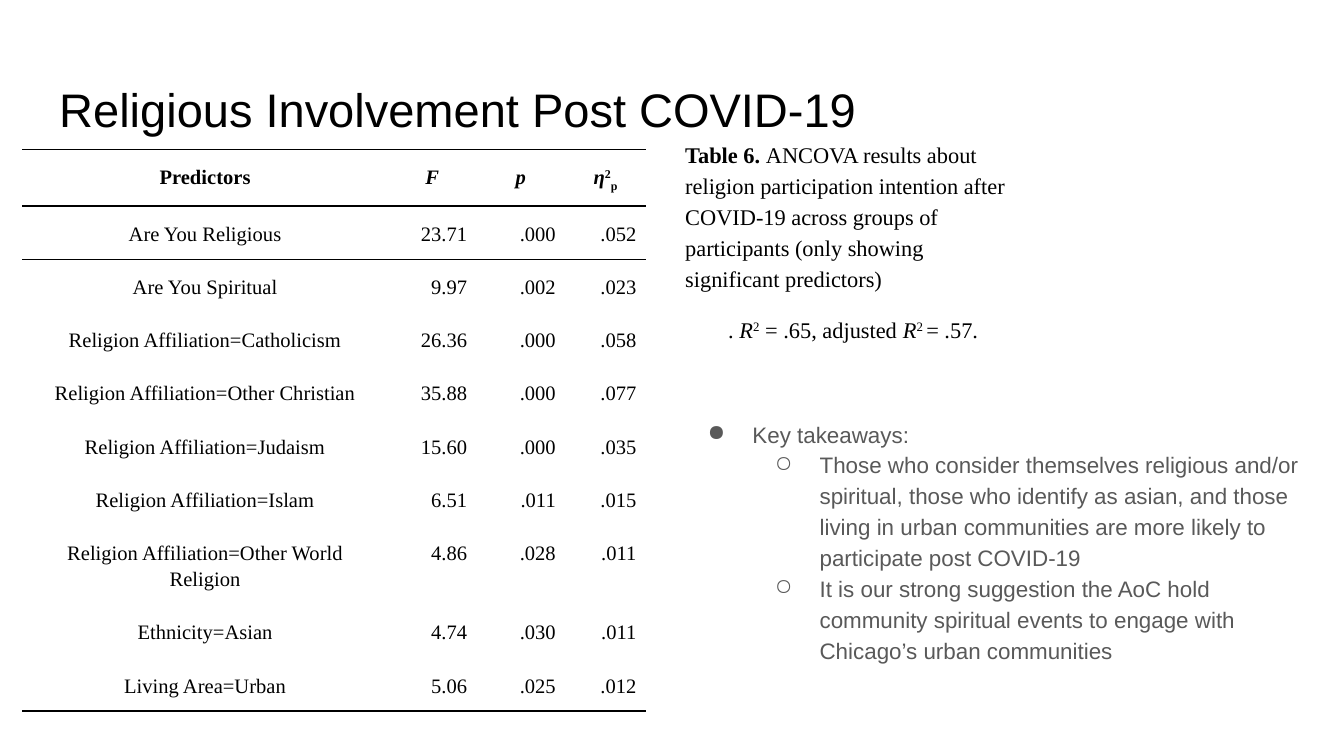
"""Build the slide on religious involvement after COVID-19."""
from lxml.etree import Element, SubElement
from pptx import Presentation
from pptx.dml.color import RGBColor
from pptx.enum.text import MSO_ANCHOR, MSO_AUTO_SIZE, PP_ALIGN
from pptx.oxml.ns import qn
from pptx.util import Pt

THEME = {
    "ink": "000000",
    "grey": "595959",
    "sans": "Arial",
    "serif": "Times New Roman",
    "title": 25.2,
    "body": 12,
    "table": 11,
}
BOLD, ITALIC = {"bold": True}, {"italic": True}
SUPER, SUB = {"baseline": 30000}, {"baseline": -25000}


def add_spans(para, spans, face, size, color):
    for text, style in spans:
        span = para.add_run()
        span.text = text
        values = {"name": THEME[face], "size": Pt(THEME[size]), "bold": False, "italic": False} | style
        baseline = values.pop("baseline", None)
        for name, value in values.items():
            setattr(span.font, name, value)
        span.font.color.rgb = RGBColor.from_string(THEME[color])
        if baseline:
            span.font._element.set("baseline", str(baseline))


def add_border(cell, edge):
    line = Element(qn(f"a:{edge}"), w=str(Pt(1)))
    fill = SubElement(line, qn("a:solidFill"))
    SubElement(fill, qn("a:srgbClr"), val=THEME["ink"])
    cell._tc.get_or_add_tcPr().insert(0, line)


deck = Presentation()
deck.slide_width, deck.slide_height = Pt(720), Pt(405)
page = deck.slides.add_slide(deck.slide_layouts[5])

title = page.shapes.title
for name, value in {"left": 24.5, "top": 35.3, "width": 671, "height": 45.4}.items():
    setattr(title, name, Pt(value))
title_para = title.text_frame.paragraphs[0]
title_para.alignment = PP_ALIGN.LEFT
add_spans(title_para, [("Religious Involvement Post COVID-19", {})], "sans", "title", "ink")

takeaways = page.shapes.add_textbox(Pt(360), Pt(216), Pt(348), Pt(167))
caption = page.shapes.add_textbox(Pt(360), Pt(29.5), Pt(195), Pt(198))
for box, anchor in (
    (title, MSO_ANCHOR.BOTTOM),
    (takeaways, MSO_ANCHOR.TOP),
    (caption, MSO_ANCHOR.MIDDLE),
):
    frame = {"word_wrap": True, "auto_size": MSO_AUTO_SIZE.NONE, "vertical_anchor": anchor}
    frame |= {f"margin_{side}": Pt(7.2) for side in ("left", "right", "top", "bottom")}
    for name, value in frame.items():
        setattr(box.text_frame, name, value)

points = [
    (0, "Key takeaways:"),
    (1, "Those who consider themselves religious and/or spiritual, those who identify as asian, "
        "and those living in urban communities are more likely to participate post COVID-19"),
    (1, "It is our strong suggestion the AoC hold community spiritual events to engage with "
        "Chicago’s urban communities"),
]
for index, (level, text) in enumerate(points):
    body = takeaways.text_frame
    para = body.add_paragraph() if index else body.paragraphs[0]
    para.level, para.line_spacing = level, 1.15
    properties = para._p.get_or_add_pPr()
    properties.set("marL", str(Pt(36 * (level + 1))))
    properties.set("indent", str(Pt(-24)))
    bullet_color = SubElement(properties, qn("a:buClr"))
    SubElement(bullet_color, qn("a:srgbClr"), val=THEME["grey"])
    SubElement(properties, qn("a:buChar"), char="●○"[level])
    add_spans(para, [(text, {})], "sans", "body", "grey")

heading = caption.text_frame.paragraphs[0]
heading.line_spacing, heading.space_before = 1.15, Pt(24)
add_spans(heading, [
    ("Table 6. ", BOLD),
    ("ANCOVA results about religion participation intention after COVID-19 across groups of "
     "participants (only showing significant predictors)", {}),
], "serif", "body", "ink")
fit = caption.text_frame.add_paragraph()
fit.line_spacing, fit.space_before = 1.07, Pt(12)
fit._p.get_or_add_pPr().set("indent", str(Pt(23)))
add_spans(fit, [
    (". ", {}), ("R", ITALIC), ("2", SUPER), (" = .65, adjusted ", {}),
    ("R", ITALIC), ("2 ", SUPER), ("= .57.", {}),
], "serif", "body", "ink")

header = [
    [("Predictors", BOLD)],
    [("F", BOLD | ITALIC)],
    [("p", BOLD | ITALIC)],
    [("η", BOLD | ITALIC), ("2", BOLD | SUPER), ("p", BOLD | SUB)],
]
results = [
    ("Are You Religious", "23.71", ".000", ".052"),
    ("Are You Spiritual", "9.97", ".002", ".023"),
    ("Religion Affiliation=Catholicism", "26.36", ".000", ".058"),
    ("Religion Affiliation=Other Christian", "35.88", ".000", ".077"),
    ("Religion Affiliation=Judaism", "15.60", ".000", ".035"),
    ("Religion Affiliation=Islam", "6.51", ".011", ".015"),
    ("Religion Affiliation=Other World Religion", "4.86", ".028", ".011"),
    ("Ethnicity=Asian", "4.74", ".030", ".011"),
    ("Living Area=Urban", "5.06", ".025", ".012"),
]
rows = [header] + [[[(text, {})] for text in result] for result in results]
widths = [195.8, 47.5, 47.5, 43.2]
holder = page.shapes.add_table(
    len(rows), len(widths), Pt(12), Pt(80), Pt(sum(widths)), Pt(20.2 * len(rows))
)
table = holder.table
table.first_row = table.horz_banding = False
table._tbl.tblPr.find(qn("a:tableStyleId")).text = "{2D5ABB26-0587-4C30-8999-92F81FD0307C}"
for column, width in zip(table.columns, widths):
    column.width = Pt(width)
cell_format = {"margin_left": 5, "margin_right": 5, "margin_top": 7.2, "margin_bottom": 7.2}
for row_index, row in enumerate(rows):
    for column_index, spans in enumerate(row):
        cell = table.cell(row_index, column_index)
        cell.fill.background()
        for name, value in cell_format.items():
            setattr(cell, name, Pt(value))
        para = cell.text_frame.paragraphs[0]
        centred = row_index == 0 or column_index == 0
        para.alignment = PP_ALIGN.CENTER if centred else PP_ALIGN.RIGHT
        para.line_spacing = 1.15
        add_spans(para, spans, "serif", "table", "ink")
        if row_index in (0, 1, len(rows) - 1):
            add_border(cell, "lnB")
        if row_index == 0:
            add_border(cell, "lnT")

deck.save("out.pptx")
